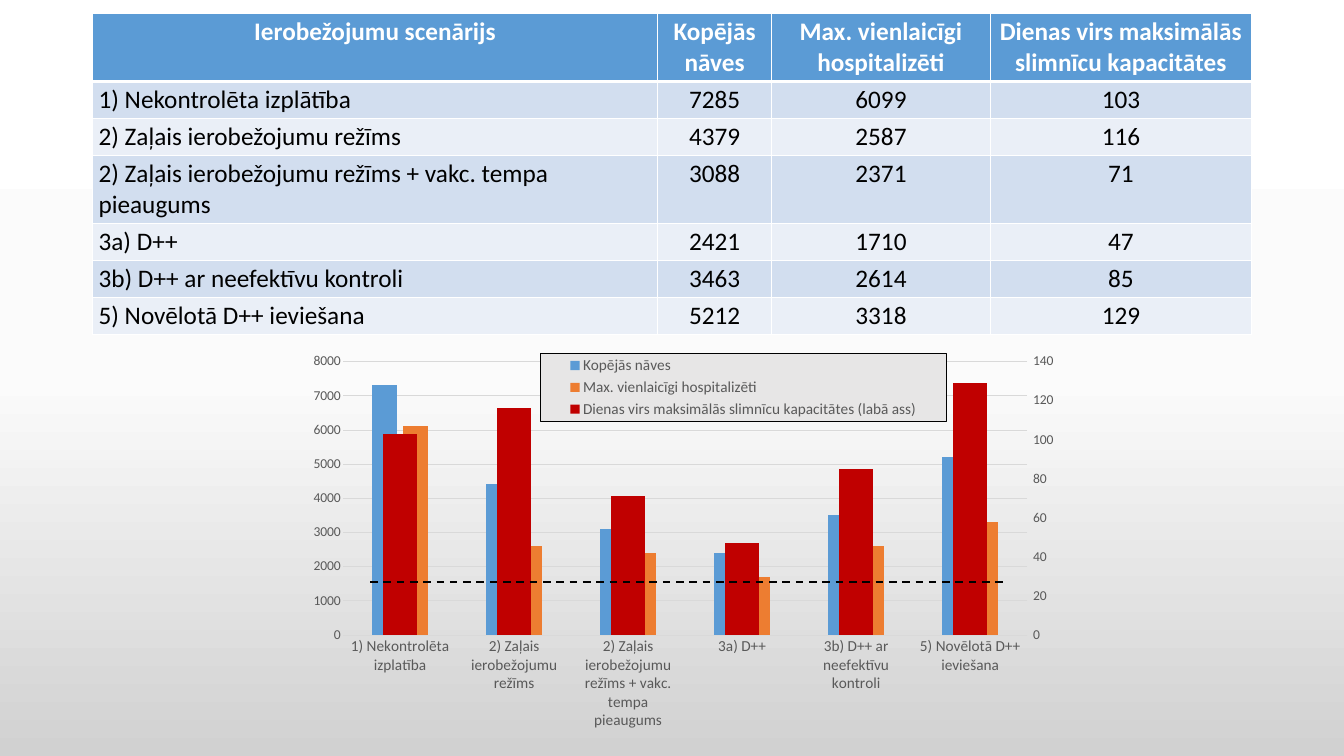
from copy import deepcopy

from lxml import etree
from pptx import Presentation
from pptx.chart.data import CategoryChartData
from pptx.dml.color import RGBColor
from pptx.enum import chart as charts, dml, shapes, text
from pptx.oxml import ns
from pptx.util import Pt

HEADERS = ["Ierobežojumu scenārijs", "Kopējās nāves", "Max. vienlaicīgi hospitalizēti",
           "Dienas virs maksimālās slimnīcu kapacitātes"]
SCENARIOS = [
    ("1) Nekontrolēta izplātība", 7285, 6099, 103),
    ("2) Zaļais ierobežojumu režīms", 4379, 2587, 116),
    ("2) Zaļais ierobežojumu režīms + vakc. tempa pieaugums", 3088, 2371, 71),
    ("3a) D++", 2421, 1710, 47),
    ("3b) D++ ar neefektīvu kontroli", 3463, 2614, 85),
    ("5) Novēlotā D++ ieviešana", 5212, 3318, 129),
]
CHART_LABELS = ["1) Nekontrolēta izplatība"] + [scenario[0] for scenario in SCENARIOS[1:]]
SERIES = [(HEADERS[1], -2), (HEADERS[2], -2), (HEADERS[3] + " (labā ass)", 0)]

WHITE = RGBColor(0xFF, 0xFF, 0xFF)
BLACK = RGBColor(0, 0, 0)
BLUE = RGBColor(0x5B, 0x9B, 0xD5)
ORANGE = RGBColor(0xED, 0x7D, 0x31)
RED = RGBColor(0xC0, 0, 0)
BANDS = [RGBColor(0xD2, 0xDE, 0xEF), RGBColor(0xEA, 0xEF, 0xF7)]
GREY_TEXT = RGBColor(0x59, 0x59, 0x59)
GRID = RGBColor(0xD9, 0xD9, 0xD9)
LEGEND_FILL = RGBColor(0xE7, 0xE6, 0xE6)
BACKGROUND = [(0, WHITE), (0.5, RGBColor(0xFB, 0xFB, 0xFB)), (1, RGBColor(0xD1, 0xD1, 0xD1))]

FONT = "Calibri"
COLUMN_WIDTHS = [666, 134, 258, 307.5]
ROW_HEIGHTS = [75, 41, 41, 75, 41, 41, 41]
PLOT_LAYOUT = (0.079, 0.044, 0.852, 0.681)
LEGEND_LAYOUT = (0.325, 0.023, 0.505, 0.171)


def set_font(font, size, color, bold=False):
    font.name, font.size, font.bold = FONT, Pt(size), bold
    font.color.rgb = color


def set_background(page):
    fill = page.background.fill
    fill.gradient()
    fill.gradient_angle = 270
    stop_list = page.element.find(".//" + ns.qn("a:gsLst"))
    stop_list.append(deepcopy(stop_list[-1]))
    for stop, (position, color) in zip(fill.gradient_stops, BACKGROUND):
        stop.position = position
        stop.color.rgb = color


def set_borders(cell, top, bottom):
    properties = cell._tc.get_or_add_tcPr()
    for index, (side, width) in enumerate([("L", 1), ("R", 1), ("T", top), ("B", bottom)]):
        line = etree.Element(ns.qn("a:ln" + side), w=str(Pt(width)))
        solid = etree.SubElement(line, ns.qn("a:solidFill"))
        etree.SubElement(solid, ns.qn("a:srgbClr"), val=str(WHITE))
        properties.insert(index, line)


def add_scenario_table(page):
    rows = [HEADERS] + SCENARIOS
    table = page.shapes.add_table(len(rows), len(HEADERS), Pt(109), Pt(16),
                                  Pt(sum(COLUMN_WIDTHS)), Pt(sum(ROW_HEIGHTS))).table
    for column, width in zip(table.columns, COLUMN_WIDTHS):
        column.width = Pt(width)
    for r, values in enumerate(rows):
        table.rows[r].height = Pt(ROW_HEIGHTS[r])
        header = r == 0
        for c, value in enumerate(values):
            cell = table.cell(r, c)
            cell.fill.solid()
            cell.fill.fore_color.rgb = BLUE if header else BANDS[(r - 1) % 2]
            set_borders(cell, 3 if r == 1 else 1, 3 if header else 1)
            para = cell.text_frame.paragraphs[0]
            centred = header or c > 0
            para.alignment = text.PP_ALIGN.CENTER if centred else text.PP_ALIGN.LEFT
            span = para.add_run()
            span.text = str(value)
            set_font(span.font, 29.7, WHITE if header else BLACK, header)


def set_layout(owner, position, inner=False):
    layout = owner.find(ns.qn("c:layout"))
    if layout is None:
        layout = etree.Element(ns.qn("c:layout"))
        owner.insert(1 if owner.find(ns.qn("c:legendPos")) is not None else 0, layout)
    manual = etree.SubElement(layout, ns.qn("c:manualLayout"))
    settings = [("layoutTarget", "inner")] if inner else []
    settings += [("xMode", "edge"), ("yMode", "edge"), *zip("xywh", position)]
    for tag, value in settings:
        etree.SubElement(manual, ns.qn("c:" + tag), val=str(value))


def style_value_axis(axis, maximum, step, tick):
    axis.minimum_scale, axis.maximum_scale, axis.major_unit = 0, maximum, step
    axis.major_tick_mark = tick
    axis.minor_tick_mark = charts.XL_TICK_MARK.NONE
    axis.tick_labels.number_format = "General"
    axis.tick_labels.number_format_is_linked = False
    set_font(axis.tick_labels.font, 16, GREY_TEXT)
    axis.format.line.fill.background()


def add_right_axis(chart):
    plot_area = chart.plots[0]._element.getparent()
    left_bars = plot_area.find(ns.qn("c:barChart"))
    right_bars = deepcopy(left_bars)
    left_bars.remove(left_bars.findall(ns.qn("c:ser"))[2])
    for series in right_bars.findall(ns.qn("c:ser"))[:2]:
        right_bars.remove(series)
    left_bars.addnext(right_bars)

    category = deepcopy(chart.category_axis._element)
    value = deepcopy(chart.value_axis._element)
    ids = {"c:catAx": "5001", "c:valAx": "5002"}
    for reference, number in zip(right_bars.findall(ns.qn("c:axId")), ids.values()):
        reference.set("val", number)
    for axis, own, other in [(category, "c:catAx", "c:valAx"), (value, "c:valAx", "c:catAx")]:
        axis.find(ns.qn("c:axId")).set("val", ids[own])
        axis.find(ns.qn("c:crossAx")).set("val", ids[other])
    category.find(ns.qn("c:delete")).set("val", "1")
    value.remove(value.find(ns.qn("c:majorGridlines")))
    value.find(ns.qn("c:axPos")).set("val", "r")
    value.find(ns.qn("c:crosses")).set("val", "max")
    value.find(ns.qn("c:scaling")).find(ns.qn("c:max")).set("val", "140")
    value.find(ns.qn("c:majorUnit")).set("val", "20")
    value.find(ns.qn("c:majorTickMark")).set("val", "out")
    chart.value_axis._element.addnext(value)
    value.addnext(category)
    set_layout(plot_area, PLOT_LAYOUT, inner=True)


def style_legend(chart):
    chart.has_legend = True
    legend = chart.legend
    legend.position = charts.XL_LEGEND_POSITION.BOTTOM
    legend.include_in_layout = False
    set_font(legend.font, 18, GREY_TEXT)
    set_layout(legend._element, LEGEND_LAYOUT)
    properties = etree.Element(ns.qn("c:spPr"))
    line = etree.Element(ns.qn("a:ln"), w=str(Pt(1)))
    for parent, color in [(properties, LEGEND_FILL), (line, BLACK)]:
        solid = etree.SubElement(parent, ns.qn("a:solidFill"))
        etree.SubElement(solid, ns.qn("a:srgbClr"), val=str(color))
    properties.append(line)
    legend._element.find(ns.qn("c:txPr")).addprevious(properties)


def add_scenario_chart(page):
    data = CategoryChartData()
    data.categories = CHART_LABELS
    for index, (name, digits) in enumerate(SERIES, 1):
        data.add_series(name, [round(scenario[index], digits) for scenario in SCENARIOS])
    chart = page.shapes.add_chart(charts.XL_CHART_TYPE.COLUMN_CLUSTERED, Pt(329.5), Pt(405),
                                  Pt(946), Pt(473), data).chart
    chart.has_title = False
    set_font(chart.font, 12, BLACK)
    plot = chart.plots[0]
    plot.gap_width, plot.overlap, plot.vary_by_categories = 237, -27, False
    for series, color in zip(plot.series, [BLUE, ORANGE, RED]):
        series.format.fill.solid()
        series.format.fill.fore_color.rgb = color

    category = chart.category_axis
    category.major_tick_mark = category.minor_tick_mark = charts.XL_TICK_MARK.NONE
    set_font(category.tick_labels.font, 18, GREY_TEXT)
    value = chart.value_axis
    value.has_major_gridlines = True
    style_value_axis(value, 8000, 1000, charts.XL_TICK_MARK.NONE)
    for line in (category.format.line, value.major_gridlines.format.line):
        line.color.rgb, line.width = GRID, Pt(0.75)
    add_right_axis(chart)
    style_legend(chart)


def add_capacity_line(page):
    line = page.shapes.add_connector(shapes.MSO_CONNECTOR.STRAIGHT,
                                     Pt(436), Pt(685.5), Pt(1182), Pt(685.5))
    line.line.color.rgb, line.line.width = BLACK, Pt(2.25)
    line.line.dash_style = dml.MSO_LINE.DASH
    etree.SubElement(line._element.spPr, ns.qn("a:effectLst"))


def main():
    deck = Presentation()
    deck.slide_width, deck.slide_height = Pt(1583.5), Pt(890.5)
    page = deck.slides.add_slide(deck.slide_layouts[6])
    set_background(page)
    add_scenario_table(page)
    add_scenario_chart(page)
    add_capacity_line(page)
    deck.save("out.pptx")


if __name__ == "__main__":
    main()
